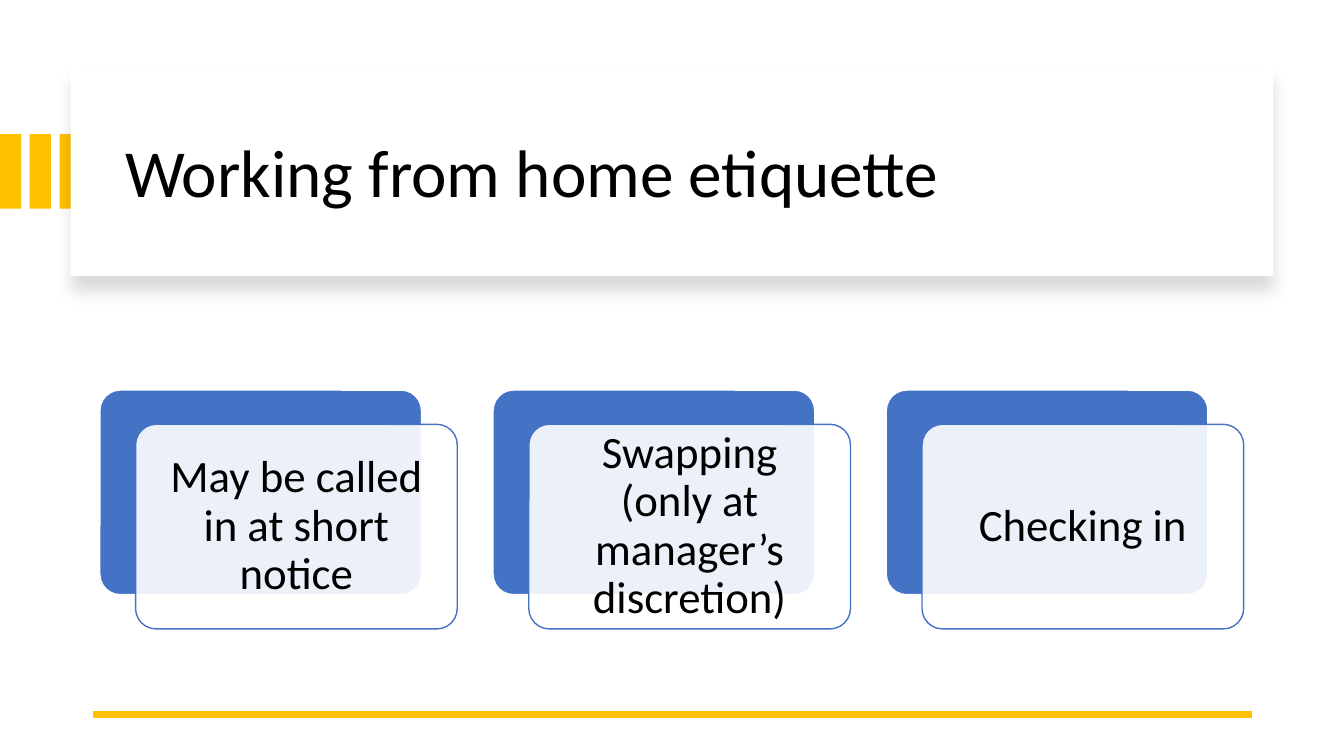
from lxml import etree
from pptx import Presentation
from pptx.dml.color import RGBColor
from pptx.enum.shapes import MSO_CONNECTOR, MSO_SHAPE as SHAPE
from pptx.enum.text import MSO_ANCHOR as ANCHOR, PP_ALIGN as ALIGN
from pptx.oxml import parse_xml
from pptx.oxml.ns import nsdecls, qn
from pptx.util import Inches, Pt

GOLD = RGBColor(0xFF, 0xC0, 0x00)
BLUE = RGBColor(0x44, 0x72, 0xC4)
WHITE = RGBColor(0xFF, 0xFF, 0xFF)
BLACK = RGBColor(0x00, 0x00, 0x00)

prs = Presentation()
prs.slide_width, prs.slide_height = Inches(13.33), Inches(7.5)
s = prs.slides.add_slide(prs.slide_layouts[5])


def add_box(kind, box, fill, line=None):
    sp = s.shapes.add_shape(kind, *map(Inches, box))
    sp.shadow.inherit = False
    sp.fill.solid()
    sp.fill.fore_color.rgb = fill
    if line is None:
        sp.line.fill.background()
    else:
        sp.line.color.rgb = line
        sp.line.width = Pt(1)
    return sp


def write(sp, text, size, align, inset_x, inset_y):
    tf = sp.text_frame
    frame = {"word_wrap": True, "vertical_anchor": ANCHOR.MIDDLE,
             "margin_left": Inches(inset_x), "margin_right": Inches(inset_x),
             "margin_top": Inches(inset_y), "margin_bottom": Inches(inset_y)}
    for name, value in frame.items():
        setattr(tf, name, value)
    p = tf.paragraphs[0]
    p.alignment, p.line_spacing = align, 0.9
    r = p.add_run()
    r.text = text
    for name, value in {"name": "Calibri", "size": Pt(size)}.items():
        setattr(r.font, name, value)
    r.font.color.rgb = BLACK


# Gold bars at the left edge
for i in range(3):
    add_box(SHAPE.RECTANGLE, (i * 0.295, 1.33, 0.21, 0.74), GOLD)

# Title panel with a soft shadow below it
panel = add_box(SHAPE.RECTANGLE, (0.7, 0.67, 11.93, 2.07), WHITE)
panel_pr = panel._element.spPr
panel_pr.remove(panel_pr.find(qn("a:effectLst")))
panel_pr.append(parse_xml(
    f'<a:effectLst {nsdecls("a")}>'
    f'<a:outerShdw blurRad="{Pt(11)}" dist="{Pt(10)}" dir="5400000" algn="t" rotWithShape="0">'
    '<a:srgbClr val="000000"><a:alpha val="15000"/></a:srgbClr>'
    '</a:outerShdw></a:effectLst>'))

# Title, brought in front of the panel
title = s.shapes.title
title.left, title.top = Inches(1.14), Inches(0.89)
title.width, title.height = Inches(11.13), Inches(1.7)
write(title, "Working from home etiquette", 48, ALIGN.LEFT, 0.1, 0.05)
s.shapes._spTree.append(title._element)

# Gold rule at the bottom
rule = s.shapes.add_connector(MSO_CONNECTOR.STRAIGHT, Inches(12.42), Inches(7.09),
                              Inches(0.92), Inches(7.09))
rule.line.color.rgb = GOLD
rule.line.width = Pt(4.5)
etree.SubElement(rule._element.spPr, qn("a:effectLst"))

# Cards: a blue back with a translucent white front offset over it
points = ["May be called in at short notice",
          "Swapping (only at manager’s discretion)",
          "Checking in"]
for i, point in enumerate(points):
    x = 0.99 + i * 3.9
    back = add_box(SHAPE.ROUNDED_RECTANGLE, (x, 3.87, 3.19, 2.03), BLUE, WHITE)
    front = add_box(SHAPE.ROUNDED_RECTANGLE, (x + 0.355, 4.21, 3.19, 2.03), WHITE, BLUE)
    for card in (back, front):
        card.adjustments[0] = 0.1
    color = front._element.spPr.find(qn("a:solidFill"))[0]
    etree.SubElement(color, qn("a:alpha"), val="90000")
    write(front, point, 32, ALIGN.CENTER, 0.19, 0.19)

prs.save("out.pptx")
